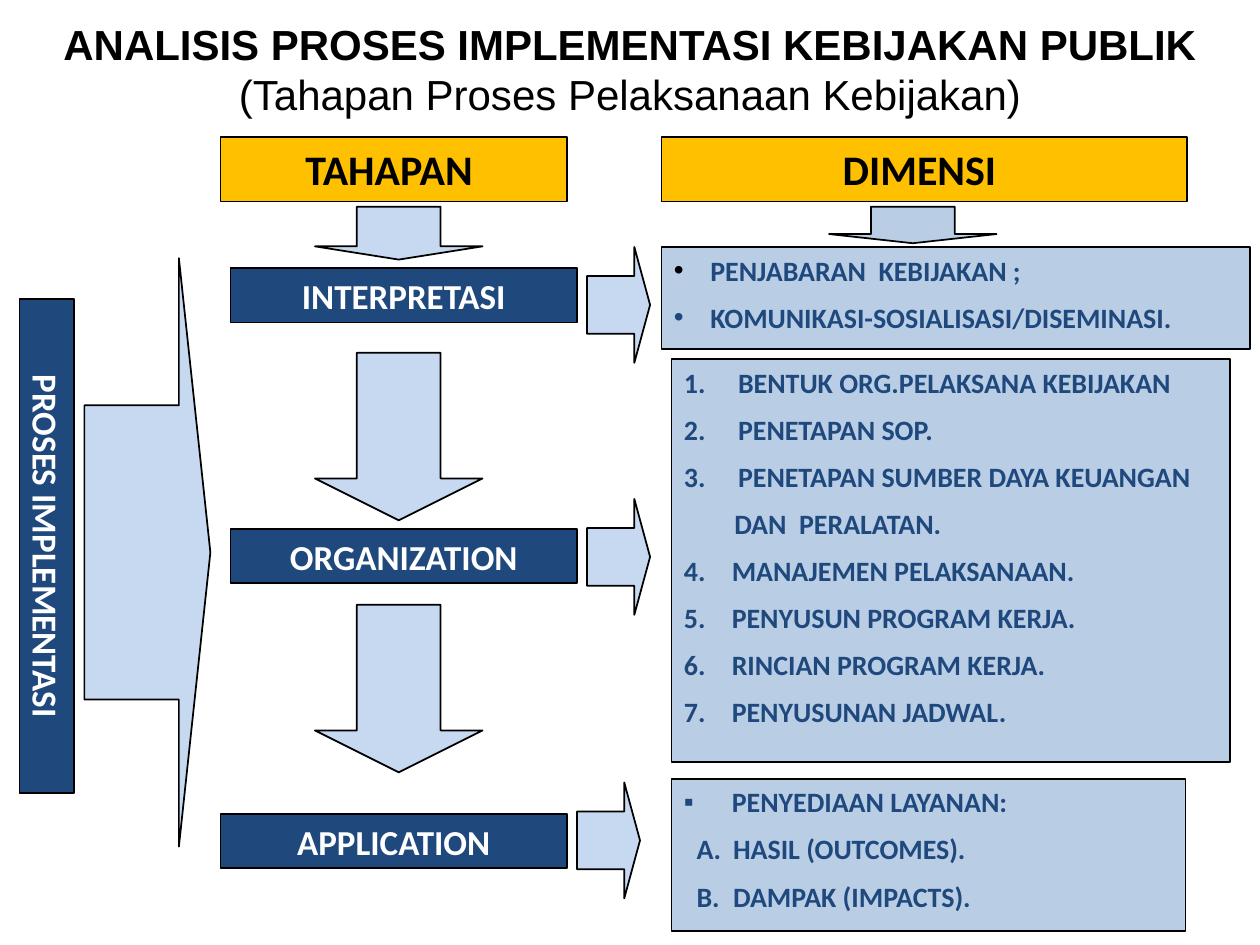
import pptx
import pptx.util
import pptx.dml.color
import pptx.enum.shapes
import pptx.enum.text
import lxml.etree
from dataclasses import dataclass
from pptx.oxml.ns import qn

Inches, Pt = pptx.util.Inches, pptx.util.Pt
RGB = pptx.dml.color.RGBColor.from_string
SHAPE = pptx.enum.shapes.MSO_SHAPE
ALIGN = pptx.enum.text.PP_ALIGN
ANCHOR = pptx.enum.text.MSO_ANCHOR


@dataclass(frozen=True)
class Theme:
    black: str = "000000"
    white: str = "FFFFFF"
    navy: str = "1F497D"
    gold: str = "FFC000"
    panel: str = "B9CDE5"
    arrow: str = "C6D9F1"
    title_font: str = "Arial"
    body_font: str = "Calibri"
    heading_size: int = 24
    stage_size: int = 20
    item_size: int = 16
    item_gap: float = 7.7


@dataclass(frozen=True)
class Item:
    """A list line; bullet is a character, a start number or None."""
    text: str
    bullet: object = None
    margin: float = 0.29
    hanging: float = 0.29
    bullet_color: str = Theme.navy


class SlideBuilder:
    def __init__(self, slide, theme):
        self.slide = slide
        self.theme = theme

    def style_font(self, paragraph, name, size, color, bold=None):
        font = paragraph.font
        font.name, font.size, font.bold = name, Pt(size), bold
        font.color.rgb = RGB(color)

    def title(self, heading, subtitle):
        title = self.slide.shapes.title
        title.left, title.top = Inches(0), Inches(-0.08)
        title.width, title.height = Inches(10), Inches(1.25)
        title.text_frame.vertical_anchor = ANCHOR.MIDDLE
        paragraph = title.text_frame.paragraphs[0]
        paragraph.alignment = ALIGN.CENTER
        self.style_font(paragraph, self.theme.title_font,
                        self.theme.heading_size, self.theme.black)
        heading_run = paragraph.add_run()
        heading_run.text = heading
        heading_run.font.bold = True
        paragraph.add_line_break()
        subtitle_run = paragraph.add_run()
        subtitle_run.text = subtitle
        subtitle_run.font.bold = False

    def block(self, kind, box, fill):
        block = self.slide.shapes.add_shape(kind, *map(Inches, box))
        block.shadow.inherit = False
        block.fill.solid()
        block.fill.fore_color.rgb = RGB(fill)
        block.line.color.rgb = RGB(self.theme.black)
        block.line.width = Pt(1)
        return block

    def arrow(self, kind, box, fill=Theme.arrow):
        arrow = self.block(kind, box, fill)
        arrow.adjustments[0], arrow.adjustments[1] = 0.5, 0.25

    def label(self, text, box, fill, color, size, rotation=0):
        label = self.block(SHAPE.RECTANGLE, box, fill)
        label.rotation = rotation
        label.text_frame.vertical_anchor = ANCHOR.TOP
        paragraph = label.text_frame.paragraphs[0]
        paragraph.text = text
        paragraph.alignment = ALIGN.CENTER
        self.style_font(paragraph, self.theme.body_font, size, color, True)

    def heading(self, text, box):
        self.label(text, box, self.theme.gold, self.theme.black,
                   self.theme.heading_size)

    def stage(self, text, box, rotation=0):
        self.label(text, box, self.theme.navy, self.theme.white,
                   self.theme.stage_size, rotation)

    def set_bullet(self, paragraph, item):
        properties = paragraph._p.get_or_add_pPr()
        properties.set("marL", str(Inches(item.margin)))
        properties.set("indent", str(-Inches(item.hanging)))

        def add(parent, tag, **attributes):
            return lxml.etree.SubElement(parent, qn(tag), attributes)

        if item.bullet is None:
            add(properties, "a:buNone")
            return
        add(add(properties, "a:buClr"), "a:srgbClr", val=item.bullet_color)
        if isinstance(item.bullet, int):
            add(properties, "a:buAutoNum", type="arabicPeriod",
                startAt=str(item.bullet))
        else:
            add(properties, "a:buFont", typeface="Arial")
            add(properties, "a:buChar", char=item.bullet)

    def list_panel(self, box, items):
        panel = self.block(SHAPE.RECTANGLE, box, self.theme.panel)
        frame = panel.text_frame
        frame.vertical_anchor = ANCHOR.TOP
        for index, item in enumerate(items):
            paragraph = frame.add_paragraph() if index else frame.paragraphs[0]
            self.set_bullet(paragraph, item)
            paragraph.text = item.text
            paragraph.alignment = ALIGN.LEFT
            paragraph.space_before = Pt(self.theme.item_gap if index else 0)
            self.style_font(paragraph, self.theme.body_font,
                            self.theme.item_size, self.theme.navy, True)


INTERPRETATION = [
    Item("PENJABARAN  KEBIJAKAN ;", "•", bullet_color=Theme.black),
    Item("KOMUNIKASI-SOSIALISASI/DISEMINASI.", "•"),
]
ORGANIZATION = [
    *(Item(text, 1, 0.43, 0.43) for text in (
        "BENTUK ORG.PELAKSANA KEBIJAKAN", "PENETAPAN SOP.",
        "PENETAPAN SUMBER DAYA KEUANGAN")),
    Item("DAN  PERALATAN.", margin=0.4, hanging=0),
    *(Item(text, 4, 0.38, 0.38) for text in (
        "MANAJEMEN PELAKSANAAN.", "PENYUSUN PROGRAM KERJA.",
        "RINCIAN PROGRAM KERJA.", "PENYUSUNAN JADWAL.")),
]
APPLICATION = [
    Item("PENYEDIAAN LAYANAN:", "▪", 0.38, 0.38),
    Item("A.\tHASIL (OUTCOMES).", margin=0.39),
    Item("B.\tDAMPAK (IMPACTS).", margin=0.39),
]
# name, label left, label top, arrow top, panel box, panel items
STAGES = [
    ("INTERPRETASI", 1.83, 2.13, 1.96, (5.25, 1.96, 4.67, 0.81), INTERPRETATION),
    ("ORGANIZATION", 1.83, 4.2, 3.96, (5.33, 2.85, 4.43, 3.2), ORGANIZATION),
    ("APPLICATION", 1.75, 6.46, 6.21, (5.33, 6.18, 4.08, 1.21), APPLICATION),
]


def main():
    deck = pptx.Presentation()
    deck.slide_width, deck.slide_height = Inches(10), Inches(7.5)
    slide = deck.slides.add_slide(deck.slide_layouts.get_by_name("Title Only"))
    theme = Theme()
    builder = SlideBuilder(slide, theme)

    builder.title("ANALISIS PROSES IMPLEMENTASI KEBIJAKAN PUBLIK",
                  "(Tahapan Proses Pelaksanaan Kebijakan)")
    builder.stage("PROSES IMPLEMENTASI", (-1.59, 4.12, 3.92, 0.43), rotation=90)
    builder.arrow(SHAPE.RIGHT_ARROW, (0.67, 2.05, 1, 4.67))

    builder.heading("TAHAPAN ", (1.75, 1.09, 2.75, 0.51))
    builder.heading("DIMENSI ", (5.25, 1.09, 4.17, 0.51))
    for top, height in ((1.64, 0.42), (2.8, 1.33), (4.8, 1.33)):
        builder.arrow(SHAPE.DOWN_ARROW, (2.5, top, 1.33, height))
    builder.arrow(SHAPE.DOWN_ARROW, (6.58, 1.64, 1.33, 0.29), theme.panel)

    label_width, arrow_gap = 2.75, 0.08
    for name, left, label_top, arrow_top, panel_box, items in STAGES:
        builder.stage(name, (left, label_top, label_width, 0.43))
        arrow_left = left + label_width + arrow_gap
        builder.arrow(SHAPE.RIGHT_ARROW, (arrow_left, arrow_top, 0.5, 0.92))
        builder.list_panel(panel_box, items)

    deck.save("out.pptx")


if __name__ == "__main__":
    main()
